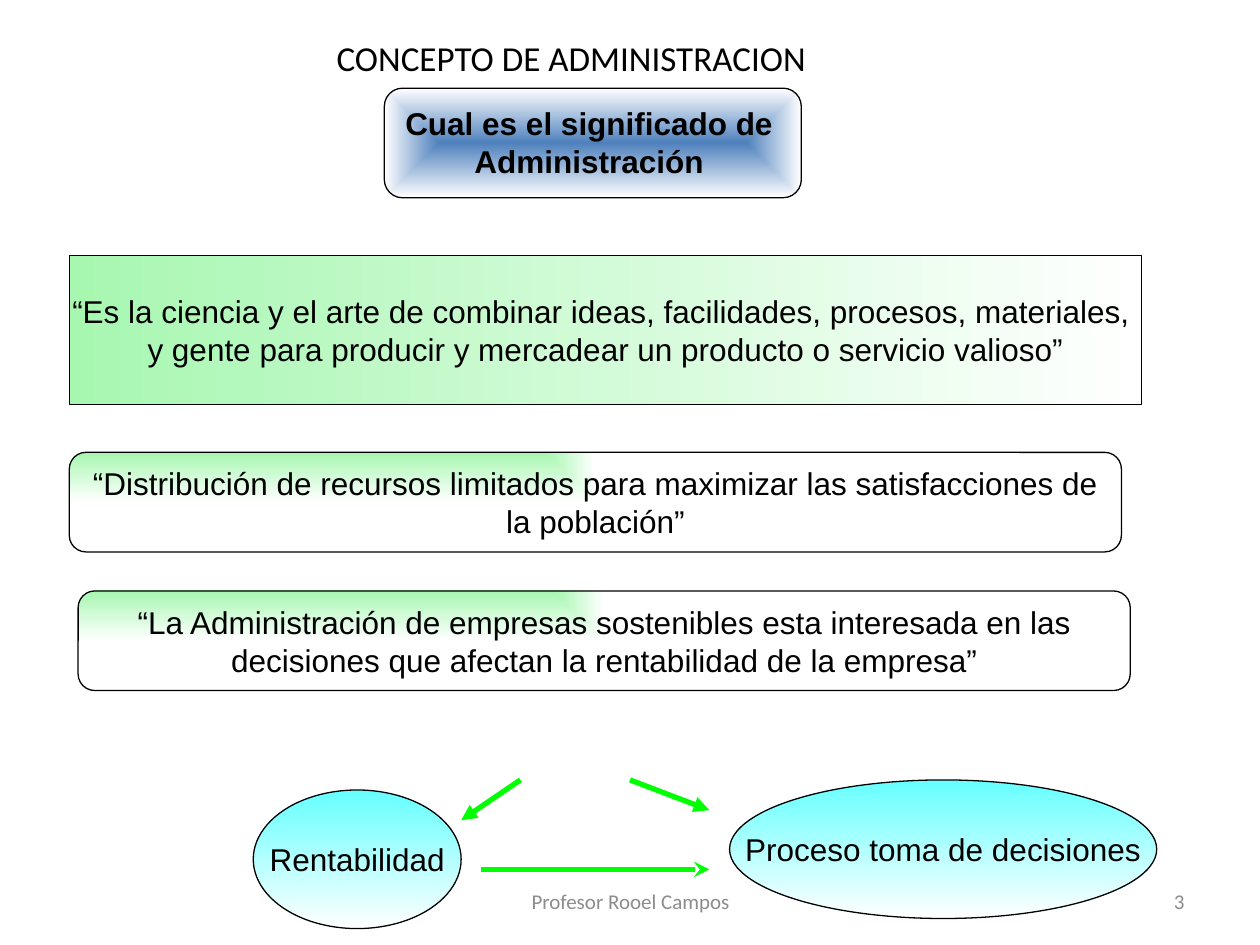
from lxml import etree
from pptx import Presentation
from pptx.dml.color import RGBColor
from pptx.enum import shapes, text
from pptx.oxml.ns import qn
from pptx.util import Inches, Pt

THEME = {
    "black": "000000", "grey": "8C8C8C", "white": "FFFFFF", "blue": "4F81BD",
    "green": "A7F7B1", "cyan": "66FFFF", "arrow": "00FF00",
    "head": "Calibri", "body": "Arial",
    "title": 20, "text": 18, "small": 12, "outline": 0.75, "arrow_width": 3,
}

# Content
TITLE = "CONCEPTO DE ADMINISTRACION"
QUESTION = "Cual es el significado de Administración"
SHAPE = shapes.MSO_SHAPE
# kind, box, start colour, gradient (angle, or path with focus rectangle), lines
CORNER = ("rect", (0, 0, 100, 100))
CENTRE = ("shape", (50, 50, 50, 50))
PANELS = [
    (SHAPE.ROUNDED_RECTANGLE, (3.05, 0.7, 3.31, 0.87), "blue", CENTRE, []),
    (SHAPE.RECTANGLE, (0.55, 2.03, 8.51, 1.18), "green", 0, [
        "“Es la ciencia y el arte de combinar ideas, facilidades, procesos, materiales, ",
        "y gente para producir y mercadear un producto o servicio valioso”"]),
    (SHAPE.ROUNDED_RECTANGLE, (0.55, 3.59, 8.35, 0.79), "green", CORNER, [
        "“Distribución de recursos limitados para maximizar las satisfacciones de",
        "la población”"]),
    (SHAPE.ROUNDED_RECTANGLE, (0.62, 4.69, 8.35, 0.79), "green", CORNER, [
        "“La Administración de empresas sostenibles esta interesada en las",
        "decisiones que afectan la rentabilidad de la empresa”"]),
    (SHAPE.OVAL, (2.01, 6.27, 1.65, 1.1), "cyan", 270, ["Rentabilidad"]),
    (SHAPE.OVAL, (5.79, 6.19, 3.39, 1.1), "cyan", 270, ["Proceso toma de decisiones"]),
]
ARROWS = [
    ((3.82, 6.9), (5.63, 6.9), "stealth"),
    ((4.13, 6.19), (3.66, 6.51), "triangle"),
    ((5, 6.19), (5.63, 6.43), "triangle"),
]
FOOTER = [
    ("Profesor Rooel Campos", (3.42, 6.95, 3.17, 0.4), "CENTER"),
    ("3", (7.17, 6.95, 2.33, 0.4), "RIGHT"),
]


def rgb(name):
    return RGBColor.from_string(THEME[name])


def inches(values):
    return [Inches(v) for v in values]


def write(sp, lines, size="text", font="body", color="black", align="CENTER",
          bold=False, anchor="MIDDLE", wrap=True):
    tf = sp.text_frame
    frame = {"word_wrap": wrap, "auto_size": text.MSO_AUTO_SIZE.NONE,
             "vertical_anchor": text.MSO_ANCHOR[anchor]}
    for key, value in frame.items():
        setattr(tf, key, value)
    for i, line in enumerate(lines):
        p = tf.add_paragraph() if i else tf.paragraphs[0]
        p.alignment = text.PP_ALIGN[align]
        r = p.add_run()
        r.text = line
        values = {"name": THEME[font], "size": Pt(THEME[size]), "bold": bold}
        for key, value in values.items():
            setattr(r.font, key, value)
        r.font.color.rgb = rgb(color)


def fill_gradient(sp, color, gradient):
    sp.fill.gradient()
    for stop, name, at in zip(sp.fill.gradient_stops, (color, "white"), (0, 1)):
        stop.color.rgb = rgb(name)
        stop.position = at
    if not isinstance(gradient, tuple):
        sp.fill.gradient_angle = gradient
        return
    kind, focus = gradient
    lin = sp._element.spPr.find(".//" + qn("a:lin"))
    path = etree.Element(qn("a:path"), path=kind)
    edges = {side: str(v * 1000) for side, v in zip("ltrb", focus)}
    etree.SubElement(path, qn("a:fillToRect"), edges)
    lin.getparent().replace(lin, path)


def add_panel(s, kind, box, color, gradient, lines):
    sp = s.shapes.add_shape(kind, *inches(box))
    sp.shadow.inherit = False
    fill_gradient(sp, color, gradient)
    sp.line.color.rgb = rgb("black")
    sp.line.width = Pt(THEME["outline"])
    write(sp, lines, wrap=False)


def add_arrow(s, start, end, head):
    line = s.shapes.add_connector(shapes.MSO_CONNECTOR.STRAIGHT, *inches(start + end))
    line.line.color.rgb = rgb("arrow")
    line.line.width = Pt(THEME["arrow_width"])
    etree.SubElement(line.line._get_or_add_ln(), qn("a:tailEnd"), type=head)
    etree.SubElement(line._element.spPr, qn("a:effectLst"))


def add_text(s, box, lines, **style):
    write(s.shapes.add_textbox(*inches(box)), lines, **style)


def main():
    prs = Presentation()
    prs.slide_width, prs.slide_height = inches((10, 7.5))
    s = prs.slides.add_slide(prs.slide_layouts[5])

    # Title
    title = s.shapes.title
    title.left, title.top, title.width, title.height = inches((0.78, 0.23, 7.51, 0.46))
    write(title, [TITLE], size="title", font="head")

    # Panels, with the question over the first one
    for panel in PANELS:
        add_panel(s, *panel)
    add_text(s, (3.05, 0.78, 3.25, 0.7), [QUESTION], bold=True, anchor="TOP")

    # Arrows
    for arrow in ARROWS:
        add_arrow(s, *arrow)

    # Footer
    for line, box, align in FOOTER:
        add_text(s, box, [line], size="small", font="head", color="grey", align=align)

    prs.save("out.pptx")


if __name__ == "__main__":
    main()
